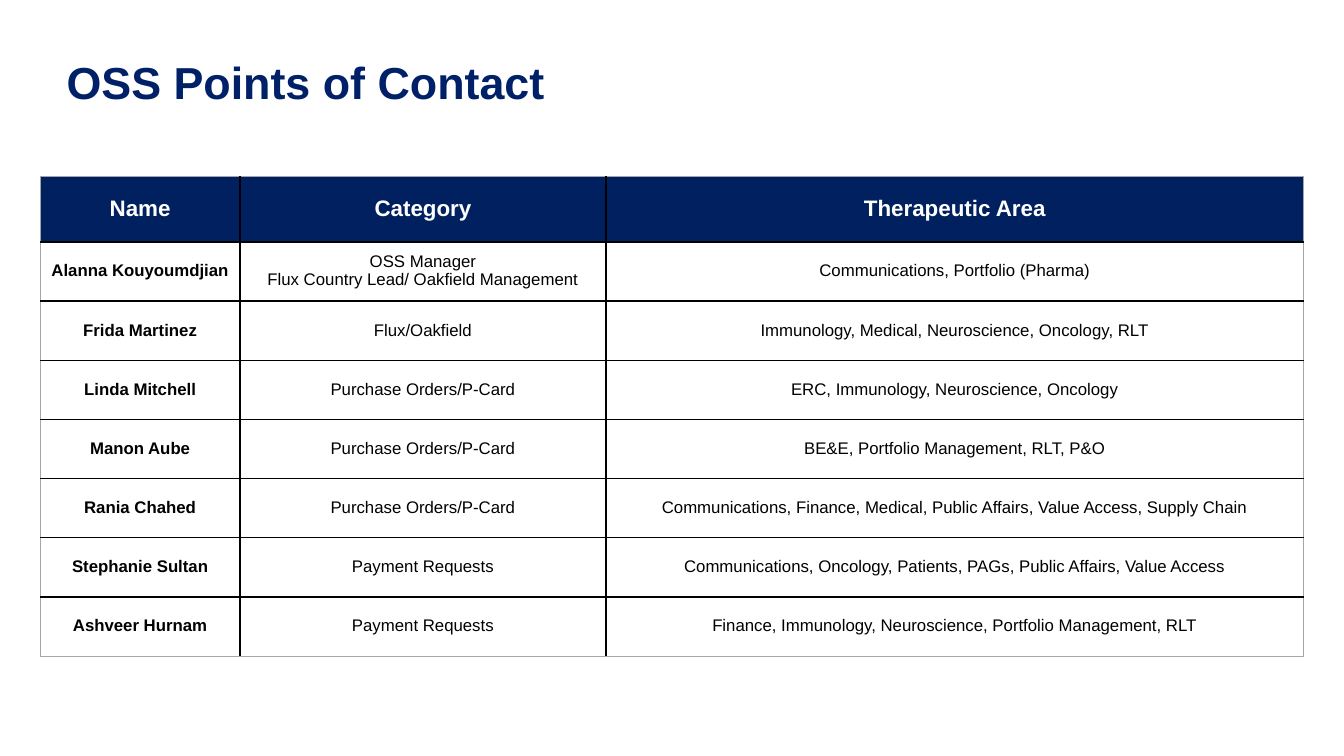
from dataclasses import dataclass

from lxml import etree
from pptx import Presentation
from pptx.dml.color import RGBColor as RGB
from pptx.enum.text import MSO_ANCHOR as Anchor, PP_ALIGN as Align
from pptx.oxml.ns import qn
from pptx.util import Inches, Pt


@dataclass(frozen=True)
class Theme:
    font: str = "Arial"
    title_color: str = "002068"
    header_fill: str = "002060"
    header_text: str = "FFFFFF"
    body_text: str = "000000"
    rule: str = "000000"
    frame: str = "A6A6A6"
    title_size: int = 32
    header_size: int = 16
    body_size: int = 12
    thin: float = 1
    thick: float = 1.5
    hairline: float = 0.5
    line_spacing: float = 0.95


HEADERS = ("Name", "Category", "Therapeutic Area")
CONTACTS = (
    ("Alanna Kouyoumdjian", "OSS Manager\nFlux Country Lead/ Oakfield Management",
     "Communications, Portfolio (Pharma)"),
    ("Frida Martinez", "Flux/Oakfield", "Immunology, Medical, Neuroscience, Oncology, RLT"),
    ("Linda Mitchell", "Purchase Orders/P-Card", "ERC, Immunology, Neuroscience, Oncology"),
    ("Manon Aube", "Purchase Orders/P-Card", "BE&E, Portfolio Management, RLT, P&O"),
    ("Rania Chahed", "Purchase Orders/P-Card",
     "Communications, Finance, Medical, Public Affairs, Value Access, Supply Chain"),
    ("Stephanie Sultan", "Payment Requests",
     "Communications, Oncology, Patients, PAGs, Public Affairs, Value Access"),
    ("Ashveer Hurnam", "Payment Requests",
     "Finance, Immunology, Neuroscience, Portfolio Management, RLT"),
)
COLUMN_WIDTHS = (1.98, 3.63, 6.92)
TABLE_HEIGHT = 4.76
HEADER_HEIGHT = 0.65


class SlideBuilder:
    def __init__(self, slide, theme):
        self.slide = slide
        self.theme = theme

    def format_text(self, frame, size, color, bold, align):
        for paragraph in frame.paragraphs:
            paragraph.alignment = align
            paragraph.line_spacing = self.theme.line_spacing
            for run in paragraph.runs:
                run.font.name = self.theme.font
                run.font.size = Pt(size)
                run.font.bold = bold
                run.font.color.rgb = RGB.from_string(color)

    def title(self, text, left, top, width, height):
        box = self.slide.shapes.add_textbox(
            Inches(left), Inches(top), Inches(width), Inches(height))
        frame = box.text_frame
        frame.word_wrap = True
        frame.margin_left = frame.margin_right = frame.margin_top = frame.margin_bottom = 0
        frame.text = text
        self.format_text(frame, self.theme.title_size, self.theme.title_color, True, Align.LEFT)

    def edge(self, position, last):
        """Give colour and width of a grid line, counted from 0 to last."""
        theme = self.theme
        if position in (0, last):
            return theme.frame, theme.hairline
        return theme.rule, theme.thick if position == 1 else theme.thin

    def borders(self, cell, edges):
        properties = cell._tc.get_or_add_tcPr()
        for side, (color, width) in zip("LRTB", edges):
            line = etree.SubElement(properties, qn(f"a:ln{side}"), w=str(Pt(width)))
            fill = etree.SubElement(line, qn("a:solidFill"))
            etree.SubElement(fill, qn("a:srgbClr"), val=color)

    def cell(self, cell, text, is_header, bold):
        theme = self.theme
        if is_header:
            cell.fill.solid()
            cell.fill.fore_color.rgb = RGB.from_string(theme.header_fill)
        else:
            cell.fill.background()
        cell.vertical_anchor = Anchor.MIDDLE
        cell.margin_left = cell.margin_right = Inches(0.05)
        cell.text_frame.text = text
        size = theme.header_size if is_header else theme.body_size
        color = theme.header_text if is_header else theme.body_text
        self.format_text(cell.text_frame, size, color, bold, Align.CENTER)

    def table(self, rows, left, top, widths, height, header_height):
        row_count, column_count = len(rows), len(widths)
        table = self.slide.shapes.add_table(
            row_count, column_count, Inches(left), Inches(top),
            Inches(sum(widths)), Inches(height)).table
        table.first_row = table.horz_banding = False
        for column, width in zip(table.columns, widths):
            column.width = Inches(width)
        body_height = (height - header_height) / (row_count - 1)
        for r, texts in enumerate(rows):
            table.rows[r].height = Inches(body_height if r else header_height)
            for c, text in enumerate(texts):
                cell = table.cell(r, c)
                self.borders(cell, (
                    self.edge(c, column_count), self.edge(c + 1, column_count),
                    self.edge(r, row_count), self.edge(r + 1, row_count)))
                self.cell(cell, text, is_header=r == 0, bold=r == 0 or c == 0)


def main():
    deck = Presentation()
    deck.slide_width, deck.slide_height = Inches(13.33), Inches(7.5)
    builder = SlideBuilder(deck.slides.add_slide(deck.slide_layouts[6]), Theme())
    builder.table((HEADERS, *CONTACTS), 0.4, 1.75, COLUMN_WIDTHS, TABLE_HEIGHT, HEADER_HEIGHT)
    builder.title("OSS Points of Contact", 0.66, 0.58, 10.55, 1.17)
    deck.save("out.pptx")


if __name__ == "__main__":
    main()
